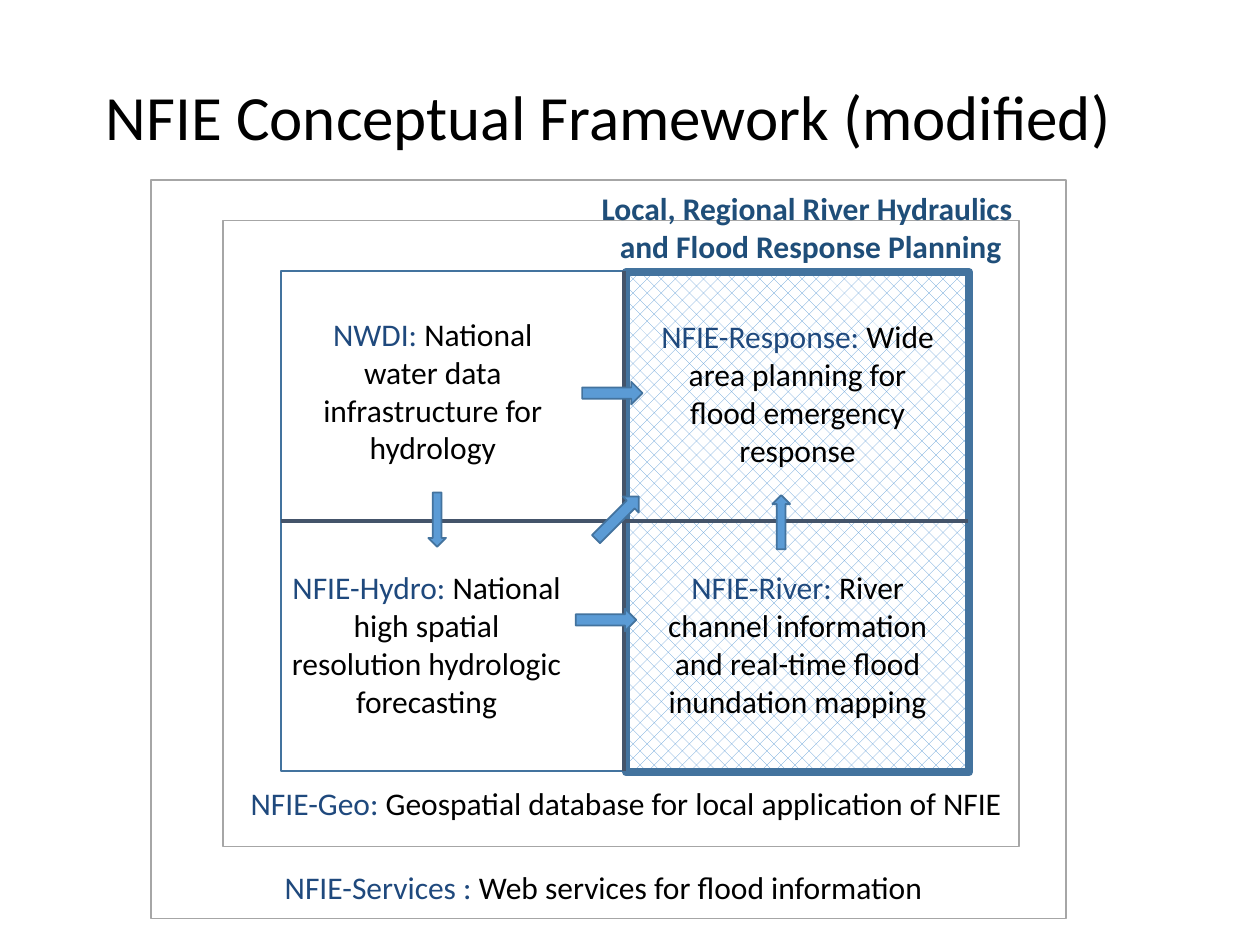
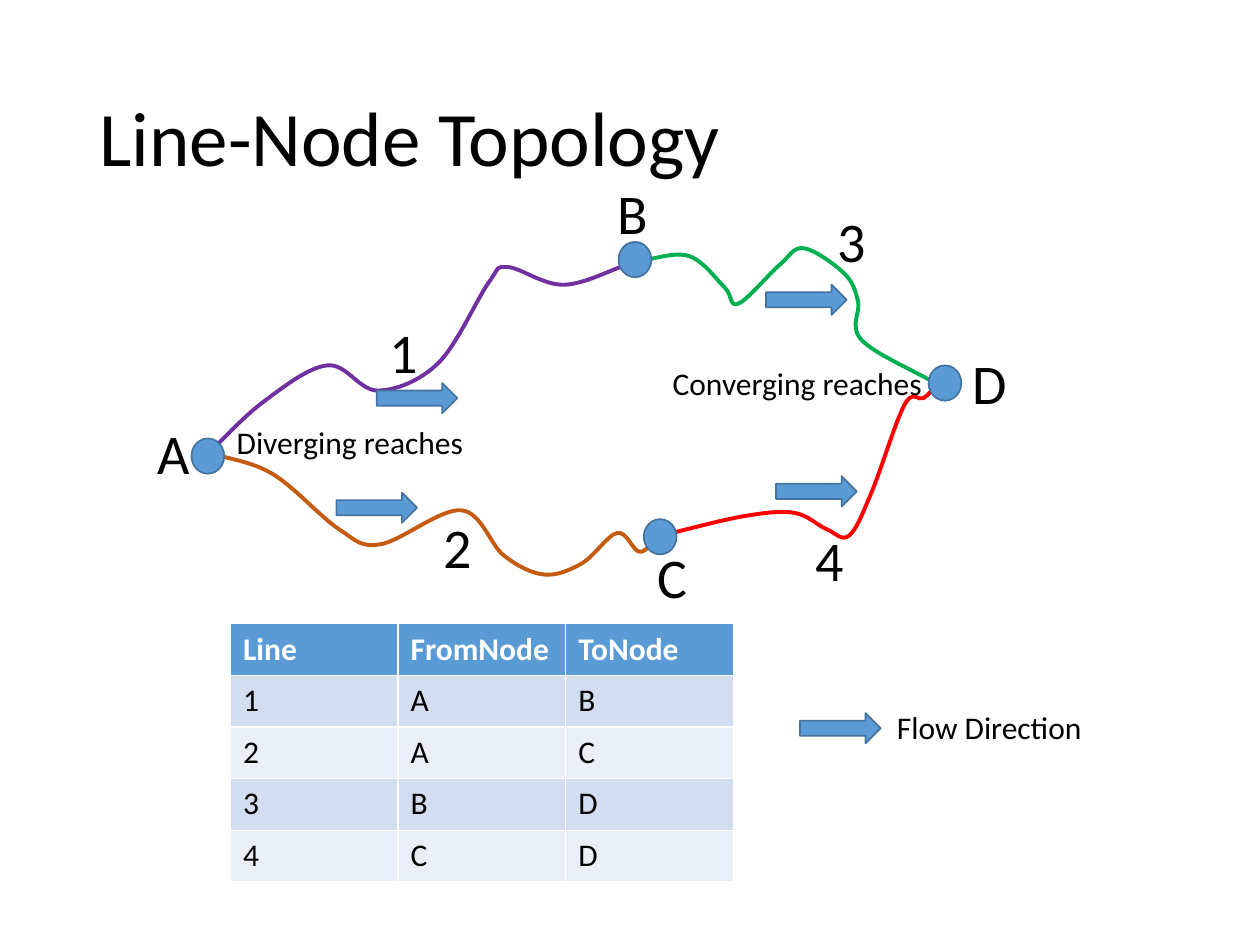
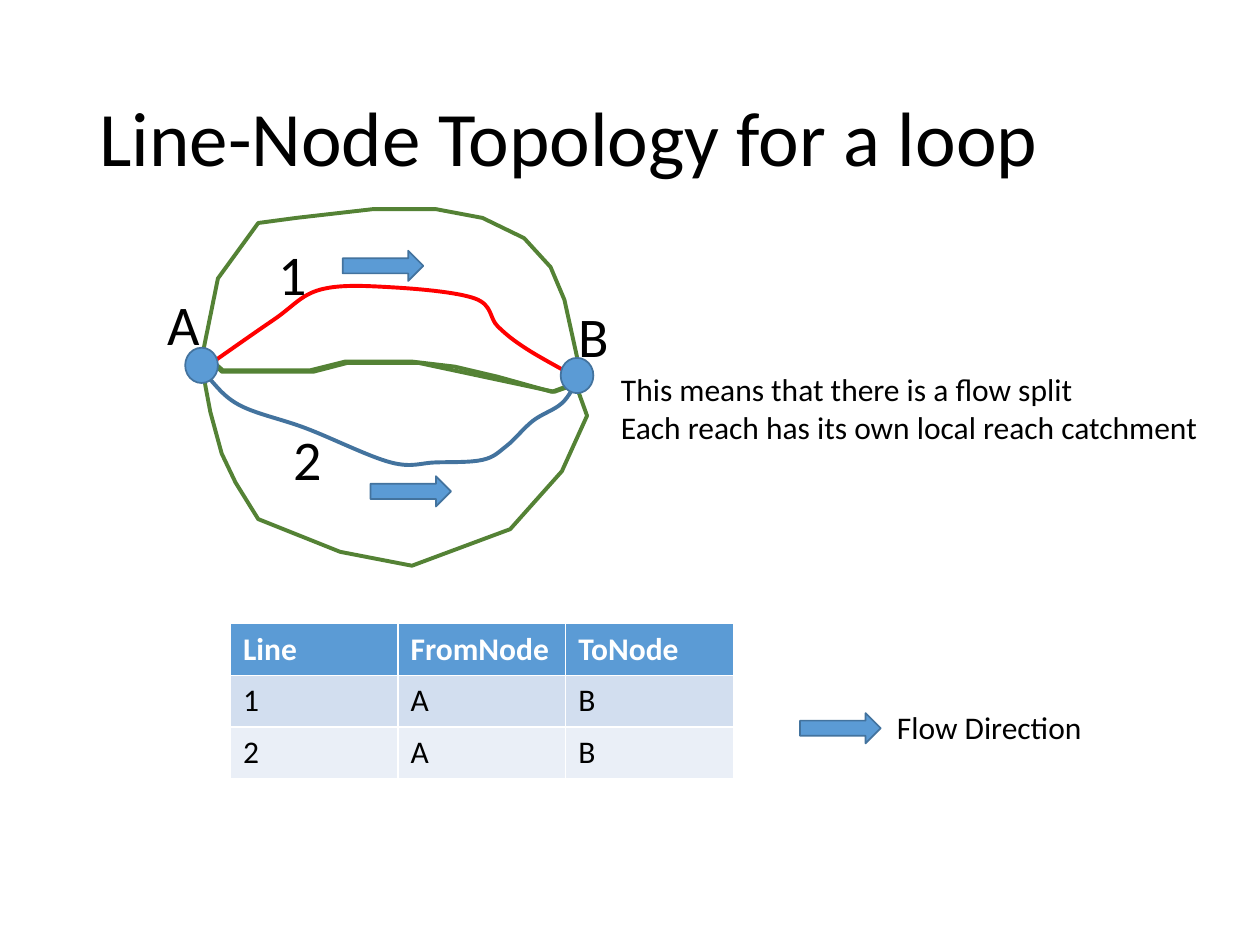
from dataclasses import dataclass

from lxml.etree import SubElement
from pptx import Presentation
from pptx.dml.color import RGBColor
from pptx.enum.dml import MSO_PATTERN
from pptx.enum.shapes import MSO_CONNECTOR, MSO_SHAPE
from pptx.enum.text import MSO_ANCHOR, MSO_AUTO_SIZE, PP_ALIGN
from pptx.oxml.ns import qn
from pptx.util import Emu, Inches, Pt

FONT = "Calibri"
COLORS = {
    "ink": "000000",
    "paper": "FFFFFF",
    "accent": "5B9BD5",
    "outline": "43739E",
    "frame": "A6A6A6",
    "divider": "44546A",
    "term": "1F497D",
    "heading": "1F4E79",
    "odd_row": "D2DEEF",
    "even_row": "EAEFF7",
    "purple": "7030A0",
    "orange": "C55A11",
    "green": "00B050",
    "red": "FF0000",
    "catchment": "548235",
}


@dataclass(frozen=True)
class Box:
    left: float
    top: float
    width: float
    height: float

    def lengths(self) -> list:
        return [Inches(v) for v in (self.left, self.top, self.width, self.height)]


@dataclass(frozen=True)
class Component:
    term: str
    meaning: str
    box: Box
    wrap: bool = True


@dataclass(frozen=True)
class FlowArrow:
    box: Box
    kind: MSO_SHAPE = MSO_SHAPE.RIGHT_ARROW
    rotation: float = 0


@dataclass(frozen=True)
class Reach:
    color: str
    knots: tuple


@dataclass(frozen=True)
class Mark:
    text: str
    left: float
    top: float


TITLE_BOX = Box(0.69, 0.4, 8.62, 1.45)
QUADRANTS = Box(2.23, 2.15, 5.45, 3.97)
NODE_WIDTH, NODE_HEIGHT = 0.26, 0.28
TABLE_LEFT, TABLE_TOP = 1.83, 4.95
COLUMN_WIDTH, ROW_HEIGHT = 1.33, 0.41
TABLE_HEADER = ("Line", "FromNode", "ToNode")

COMPONENTS = (
    Component("NFIE-Services : ", "Web services for flood information",
              Box(2.13, 6.84, 5.32, 0.4), wrap=False),
    Component("NFIE-Geo: ", "Geospatial database for local application of NFIE",
              Box(1.85, 6.17, 6.24, 0.4), wrap=False),
    Component("NWDI: ", "National water data infrastructure for hydrology",
              Box(2.3, 2.45, 2.27, 1.31)),
    Component("NFIE-Hydro: ", "National high spatial resolution hydrologic forecasting",
              Box(2.19, 4.46, 2.39, 1.31)),
    Component("NFIE-River: ", "River channel information and real-time flood inundation mapping",
              Box(5.14, 4.46, 2.38, 1.31)),
    Component("NFIE-Response: ", "Wide area planning for flood emergency response",
              Box(5.14, 2.47, 2.38, 1.31)),
)
FRAMEWORK_ARROWS = (
    FlowArrow(Box(4.62, 3.03, 0.48, 0.18)),
    FlowArrow(Box(4.57, 4.83, 0.48, 0.18)),
    FlowArrow(Box(4.66, 4.02, 0.48, 0.18), rotation=-45),
    FlowArrow(Box(3.4, 3.91, 0.14, 0.43), MSO_SHAPE.DOWN_ARROW),
    FlowArrow(Box(6.13, 3.93, 0.14, 0.43), MSO_SHAPE.DOWN_ARROW, 180),
)

NETWORK_REACHES = (
    Reach("purple", ((1.62, 3.63), (2.09, 3.19), (2.6, 2.9), (3, 3.1), (3.48, 2.88),
                     (3.88, 2.24), (4.03, 2.12), (4.48, 2.26), (5.03, 2.08))),
    Reach("orange", ((1.65, 3.59), (2.16, 3.76), (2.69, 4.2), (3.02, 4.32), (3.66, 4.05),
                     (4, 4.41), (4.32, 4.56), (4.62, 4.47), (4.9, 4.23), (5.08, 4.38),
                     (5.24, 4.23))),
    Reach("green", ((5.03, 2.08), (5.46, 2.03), (5.75, 2.28), (5.86, 2.41), (6.19, 2.1),
                    (6.38, 1.97), (6.7, 2.17), (6.81, 2.39), (6.84, 2.7), (7.44, 3.05))),
    Reach("red", ((5.25, 4.25), (5.89, 4.1), (6.3, 4.07), (6.56, 4.2), (6.74, 4.25),
                  (6.92, 3.9), (7.18, 3.21), (7.33, 3.16), (7.44, 3.05))),
)
NETWORK_NODES = ((1.52, 3.48), (4.91, 1.92), (5.11, 4.12), (7.37, 2.9))
NETWORK_MARKS = (
    Mark("A", 1.15, 3.27), Mark("B", 4.8, 1.37), Mark("C", 5.12, 4.26), Mark("D", 7.62, 2.72),
    Mark("1", 2.99, 2.47), Mark("2", 3.42, 4.02), Mark("3", 6.55, 1.59), Mark("4", 6.37, 4.12),
)
NETWORK_ROWS = (("1", "A", "B"), ("2", "A", "C"), ("3", "B", "D"), ("4", "C", "D"))
NETWORK_FLOWS = ((2.99, 3.04), (2.67, 3.91), (6.16, 3.78), (6.08, 2.26))

LOOP_REACHES = (
    Reach("red", ((1.61, 2.93), (2.17, 2.54), (2.54, 2.3), (3.1, 2.28), (3.77, 2.37),
                  (3.95, 2.59), (4.18, 2.77), (4.6, 3.01))),
    Reach("outline", ((1.6, 2.94), (1.89, 3.21), (2.43, 3.4), (3.1, 3.67), (3.46, 3.67),
                      (3.83, 3.65), (4.02, 3.54), (4.23, 3.34), (4.46, 3.2), (4.59, 3.01))),
)
LOOP_CATCHMENTS = (
    ((1.61, 2.8), (1.73, 2.21), (2.05, 1.77), (2.35, 1.73), (2.96, 1.66), (3.46, 1.66),
     (3.83, 1.73), (4.16, 1.89), (4.37, 2.12), (4.48, 2.38), (4.59, 2.88), (4.57, 3.04),
     (4.38, 3.11), (3.95, 2.99), (3.61, 2.91), (3.27, 2.87), (2.74, 2.87), (2.46, 2.94),
     (1.77, 2.94)),
    ((1.6, 2.79), (1.76, 2.95), (2.49, 2.95), (2.76, 2.88), (3.32, 2.88), (4.4, 3.11),
     (4.57, 3.05), (4.66, 3.3), (4.46, 3.74), (4.05, 4.2), (3.27, 4.49), (2.7, 4.38),
     (2.05, 4.12), (1.87, 3.83), (1.76, 3.6), (1.67, 3.27), (1.63, 3.06)),
)
LOOP_NODES = ((1.47, 2.76), (4.45, 2.84))
LOOP_MARKS = (Mark("A", 1.23, 2.25), Mark("B", 4.49, 2.34),
              Mark("1", 2.11, 1.85), Mark("2", 2.23, 3.32))
LOOP_ROWS = (("1", "A", "B"), ("2", "A", "B"))
LOOP_FLOWS = ((2.72, 1.99), (2.94, 3.78))


def rgb(color: str) -> RGBColor:
    return RGBColor.from_string(COLORS[color])


def write(frame, text: str, *, term: str = "", size: float = 18, color: str = "ink",
          bold: bool = False, align=PP_ALIGN.LEFT, spacing: float = 1.0) -> None:
    for index, line in enumerate(text.split("\n")):
        paragraph = frame.add_paragraph() if index else frame.paragraphs[0]
        paragraph.alignment = align
        paragraph.line_spacing = spacing
        pieces = [(line, color)]
        if term and index == 0:
            pieces.insert(0, (term, "term"))
        for piece, piece_color in pieces:
            run = paragraph.add_run()
            run.text = piece
            run.font.name = FONT
            run.font.size = Pt(size)
            run.font.bold = bold
            run.font.color.rgb = rgb(piece_color)


def add_label(slide, box: Box, text: str, wrap: bool = False, **style) -> None:
    frame = slide.shapes.add_textbox(*box.lengths()).text_frame
    frame.word_wrap = wrap
    frame.auto_size = MSO_AUTO_SIZE.SHAPE_TO_FIT_TEXT
    write(frame, text, **style)


def add_titled_slide(deck, text: str, box: Box = TITLE_BOX, size: float = 44):
    slide = deck.slides.add_slide(deck.slide_layouts[5])
    title = slide.shapes.title
    title.left, title.top, title.width, title.height = box.lengths()
    title.text_frame.vertical_anchor = MSO_ANCHOR.MIDDLE
    title.text_frame.auto_size = MSO_AUTO_SIZE.NONE
    write(title.text_frame, text, size=size, spacing=0.9)
    return slide


def style_line(line, color: str, width: float) -> None:
    line.color.rgb = rgb(color)
    line.width = Pt(width)


def add_figure(slide, kind, box: Box, fill: str = "", line: str = "outline", width: float = 1):
    figure = slide.shapes.add_shape(kind, *box.lengths())
    figure.shadow.inherit = False
    if fill:
        figure.fill.solid()
        figure.fill.fore_color.rgb = rgb(fill)
    else:
        figure.fill.background()
    style_line(figure.line, line, width)
    return figure


def add_arrow(slide, arrow: FlowArrow) -> None:
    add_figure(slide, arrow.kind, arrow.box, fill="accent").rotation = arrow.rotation


def add_divider(slide, start: tuple, end: tuple) -> None:
    divider = slide.shapes.add_connector(
        MSO_CONNECTOR.STRAIGHT, *[Inches(v) for v in (*start, *end)])
    style_line(divider.line, "divider", 2.25)
    SubElement(divider._element.spPr, qn("a:effectLst"))


def add_outline(slide, points: tuple, color: str, close: bool):
    corners = [(Inches(x), Inches(y)) for x, y in points]
    builder = slide.shapes.build_freeform(*corners[0])
    builder.add_line_segments(corners[1:], close=close)
    outline = builder.convert_to_shape()
    outline.shadow.inherit = False
    outline.fill.background()
    style_line(outline.line, color, 2.25)
    return outline


def add_reach(slide, reach: Reach) -> None:
    outline = add_outline(slide, reach.knots, reach.color, close=False)
    points = list(outline._element.iter(qn("a:pt")))
    knots = [(int(p.get("x")), int(p.get("y"))) for p in points]

    def beyond(end: tuple, inner: tuple) -> tuple:
        return tuple(2 * e - i for e, i in zip(end, inner))

    spine = [beyond(knots[0], knots[1]), *knots, beyond(knots[-1], knots[-2])]
    for before, start, end, after, point in zip(spine, spine[1:], spine[2:], spine[3:], points[1:]):
        leaving = [s + (e - b) / 6 for b, s, e in zip(before, start, end)]
        arriving = [e - (a - s) / 6 for s, e, a in zip(start, end, after)]
        segment = point.getparent()
        curve = segment.makeelement(qn("a:cubicBezTo"))
        for x, y in (leaving, arriving, end):
            SubElement(curve, qn("a:pt"), x=str(round(x)), y=str(round(y)))
        segment.getparent().replace(segment, curve)


def add_node_table(slide, rows: tuple) -> None:
    lines = (TABLE_HEADER, *rows)
    box = Box(TABLE_LEFT, TABLE_TOP, COLUMN_WIDTH * len(TABLE_HEADER), ROW_HEIGHT * len(lines))
    table = slide.shapes.add_table(len(lines), len(TABLE_HEADER), *box.lengths()).table
    for row, values in enumerate(lines):
        header = row == 0
        fill = "accent" if header else "odd_row" if row % 2 else "even_row"
        for column, value in enumerate(values):
            cell = table.cell(row, column)
            cell.fill.solid()
            cell.fill.fore_color.rgb = rgb(fill)
            write(cell.text_frame, value, color="paper" if header else "ink", bold=header)


def add_flow(slide, left: float, top: float) -> None:
    add_arrow(slide, FlowArrow(Box(left, top, 0.64, 0.24)))


def add_topology(slide, reaches, nodes, marks, rows, flows, catchments=()) -> None:
    for reach in reaches:
        add_reach(slide, reach)
    for catchment in catchments:
        add_outline(slide, catchment, "catchment", close=True)
    for left, top in nodes:
        add_figure(slide, MSO_SHAPE.OVAL, Box(left, top, NODE_WIDTH, NODE_HEIGHT), fill="accent")
    for mark in marks:
        add_label(slide, Box(mark.left, mark.top, 0.45, 0.64), mark.text, size=32)
    add_node_table(slide, rows)
    for left, top in flows:
        add_flow(slide, left, top)
    add_flow(slide, 6.35, 5.66)
    add_label(slide, Box(7.02, 5.57, 1.69, 0.4), "Flow Direction")


def build_framework(deck) -> None:
    slide = add_titled_slide(deck, "NFIE Conceptual Framework (modified)",
                             Box(0.74, 0.23, 8.62, 1.45), 36)
    river_side = add_figure(slide, MSO_SHAPE.RECTANGLE, Box(4.97, 2.16, 2.72, 3.97), width=4.75)
    river_side.fill.patterned()
    river_side.fill.pattern = MSO_PATTERN.PERCENT_25
    river_side.fill.fore_color.rgb = rgb("accent")
    river_side.fill.back_color.rgb = rgb("paper")
    for frame in (Box(1.2, 1.43, 7.26, 5.86), Box(1.77, 1.75, 6.32, 4.97)):
        add_figure(slide, MSO_SHAPE.RECTANGLE, frame, line="frame")
    add_figure(slide, MSO_SHAPE.RECTANGLE, QUADRANTS)
    middle_x = QUADRANTS.left + QUADRANTS.width / 2
    middle_y = QUADRANTS.top + QUADRANTS.height / 2
    add_divider(slide, (middle_x, QUADRANTS.top), (middle_x, QUADRANTS.top + QUADRANTS.height))
    add_divider(slide, (QUADRANTS.left, middle_y), (QUADRANTS.left + QUADRANTS.width, middle_y))
    for component in COMPONENTS:
        add_label(slide, component.box, component.meaning, component.wrap,
                  term=component.term, align=PP_ALIGN.CENTER)
    for arrow in FRAMEWORK_ARROWS:
        add_arrow(slide, arrow)
    add_label(slide, Box(4.66, 1.45, 3.55, 0.71),
              "Local, Regional River Hydraulics \nand Flood Response Planning",
              color="heading", bold=True, align=PP_ALIGN.CENTER)


def build_network(deck) -> None:
    slide = add_titled_slide(deck, "Line-Node Topology")
    add_topology(slide, NETWORK_REACHES, NETWORK_NODES, NETWORK_MARKS, NETWORK_ROWS, NETWORK_FLOWS)
    add_label(slide, Box(1.78, 3.31, 2.02, 0.4), "Diverging reaches")
    add_label(slide, Box(5.24, 2.84, 2.2, 0.4), "Converging reaches")


def build_loop(deck) -> None:
    slide = add_titled_slide(deck, "Line-Node Topology for a loop")
    add_topology(slide, LOOP_REACHES, LOOP_NODES, LOOP_MARKS, LOOP_ROWS, LOOP_FLOWS,
                 LOOP_CATCHMENTS)
    add_label(slide, Box(4.83, 2.89, 4.89, 0.71),
              "This means that there is a flow split\nEach reach has its own local reach catchment")


def main() -> None:
    deck = Presentation()
    deck.slide_width, deck.slide_height = Inches(10), Inches(7.5)
    build_framework(deck)
    build_network(deck)
    build_loop(deck)
    deck.save("out.pptx")


if __name__ == "__main__":
    main()
